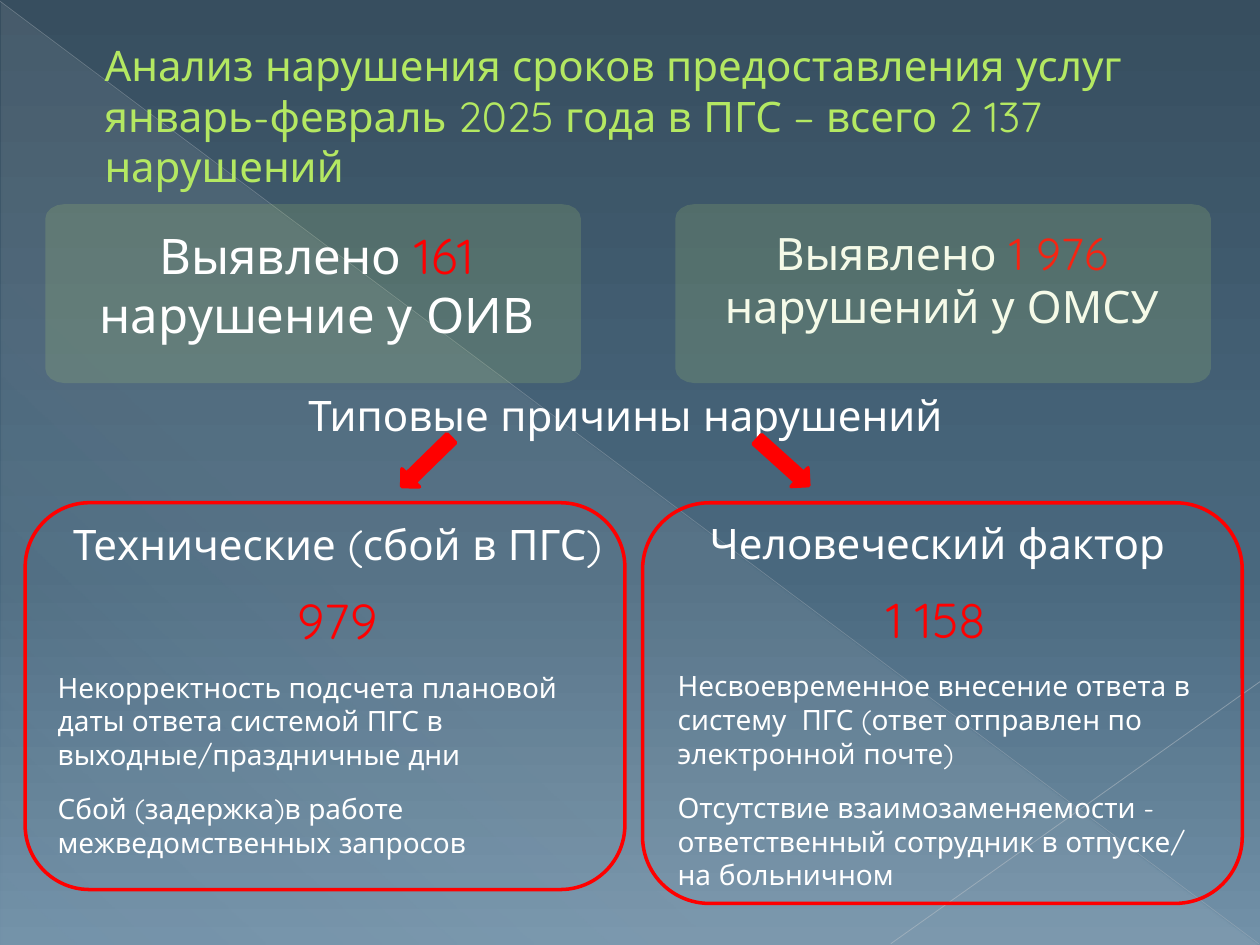
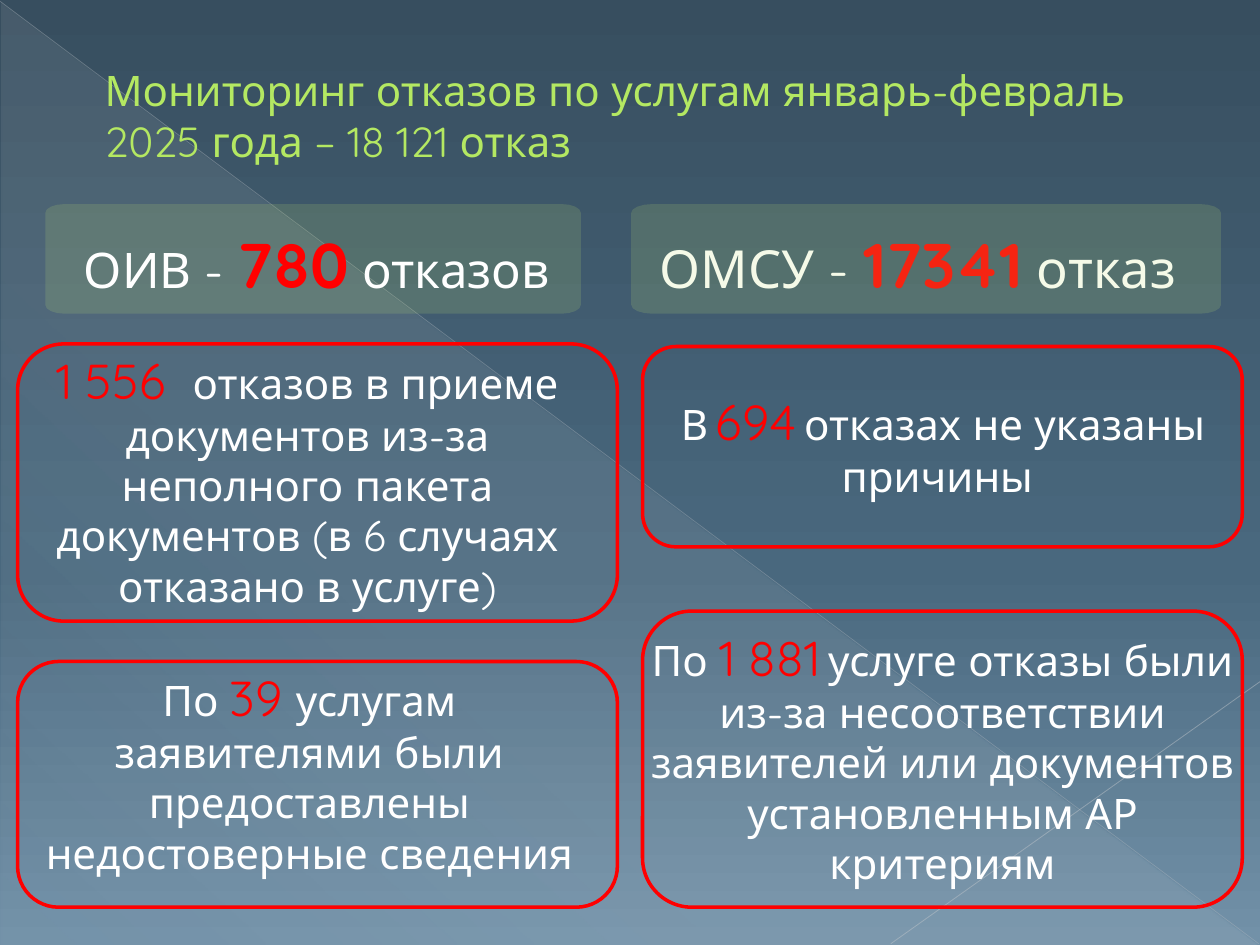
from math import cos, radians, sin

from lxml.etree import SubElement
from pptx import Presentation
from pptx.dml.color import RGBColor
from pptx.enum.shapes import MSO_CONNECTOR, MSO_SHAPE
from pptx.enum.text import MSO_ANCHOR, MSO_AUTO_SIZE, PP_ALIGN
from pptx.oxml import parse_xml
from pptx.oxml.ns import nsdecls, qn
from pptx.util import Inches, Pt

FONT = "Quicksand"
WHITE = RGBColor(0xFF, 0xFF, 0xFF)
RED = RGBColor(0xFF, 0x00, 0x00)
LIME = RGBColor(0xB4, 0xE8, 0x62)
LIME_EDGE = RGBColor(0x69, 0x8A, 0x18)
BAND_GREEN = RGBColor(0xC5, 0xE6, 0x72)
DIAGONAL_GREY = RGBColor(0xBA, 0xC0, 0xC6)
CORNER_GREY = RGBColor(0xC2, 0xC7, 0xCC)
NIGHT = RGBColor(0x37, 0x4E, 0x5F)
STEEL = RGBColor(0x49, 0x68, 0x7E)
MIST = RGBColor(0x72, 0x91, 0xA8)
PALE = RGBColor(0xE7, 0xEC, 0xED)

CENTER, LEFT = PP_ALIGN.CENTER, PP_ALIGN.LEFT
BAND_TOP = 1.62
FRAME_WIDTH = 4.76


def gradient(stops, angle):
    """Return a linear gradient; stops are (position %, colour, opacity %)."""
    marks = "".join(
        f'<a:gs pos="{position * 1000}"><a:srgbClr val="{color}">'
        f'<a:alpha val="{opacity * 1000}"/></a:srgbClr></a:gs>'
        for position, color, opacity in stops
    )
    return parse_xml(
        f'<a:gradFill {nsdecls("a")} rotWithShape="1"><a:gsLst>{marks}</a:gsLst>'
        f'<a:lin ang="{angle * 60000}" scaled="0"/></a:gradFill>'
    )


def add_text(frame, *spans, align=CENTER, before=0, after=0):
    """Add a paragraph; spans are (text, size, colour) with an optional bold flag."""
    para = frame.add_paragraph() if frame.text else frame.paragraphs[0]
    para.alignment = align
    para.space_before, para.space_after = Pt(before), Pt(after)
    for text, size, color, *bold in spans:
        span = para.add_run()
        span.text = text
        span.font.name = FONT
        span.font.size = Pt(size)
        span.font.bold = bool(bold)
        span.font.color.rgb = color
    return para


# Each band: left, width, text box, spans
# Each frame: left, top, height
# Each text: box, paragraphs as (alignment, spans)
PAGES = [
    {
        "title": "Анализ нарушения сроков предоставления услуг январь-февраль "
                 "2025 года в ПГС – всего 2 137 нарушений",
        "band_height": 1.42,
        "bands": [
            (0.36, 4.25, (0.43, 1.74, 4.17, 1.18),
             [("Выявлено ", 28, WHITE), ("161", 28, RED),
              (" нарушение у ОИВ", 28, WHITE)]),
            (5.36, 4.25, (5.39, 1.74, 4.17, 1.18),
             [("Выявлено ", 25.5, WHITE), ("1 976", 25.5, RED),
              (" нарушений у ОМСУ", 25.5, WHITE)]),
        ],
        "frames": [(0.2, 3.99, 3.07), (5.1, 3.99, 3.18)],
        "texts": [
            ((0.12, 3.04, 9.69, 0.5),
             [(CENTER, [("Типовые причины нарушений", 24, WHITE)])]),
            ((0.36, 4.07, 4.64, 2.83),
             [(CENTER, [("Технические (сбой в ПГС)", 24, WHITE)]),
              (CENTER, [("979", 28, RED)]),
              (LEFT, [("Некорректность подсчета плановой даты ответа системой ПГС "
                       "в выходные/праздничные дни", 16, WHITE)]),
              (LEFT, [("Сбой (задержка)в работе межведомственных запросов",
                       16, WHITE)])]),
            ((5.28, 4.06, 4.41, 3.1),
             [(CENTER, [("Человеческий фактор ", 24, WHITE)]),
              (CENTER, [("1 158 ", 28, RED)]),
              (LEFT, [("Несвоевременное внесение ответа в систему  ПГС "
                       "(ответ отправлен по электронной почте)", 16, WHITE)]),
              (LEFT, [("Отсутствие взаимозаменяемости - ответственный сотрудник "
                       "в отпуске/ на больничном", 16, WHITE)])]),
        ],
        "arrows": [(3.11, 135.7), (5.94, 42)],
    },
    {
        "title": "Мониторинг отказов по услугам январь-февраль 2025 года – 18 121 отказ",
        "band_height": 0.87,
        "bands": [
            (0.36, 4.25, (0.43, 1.74, 4.17, 0.75),
             [("ОИВ - ", 28, WHITE), ("780", 36, RED, True),
              (" отказов", 28, WHITE)]),
            (5.01, 4.68, (5, 1.74, 4.57, 1.18),
             [("ОМСУ - ", 30, WHITE), ("17341", 36, RED, True),
              (" отказ", 30, WHITE)]),
        ],
        "frames": [(0.14, 2.73, 2.2), (5.1, 2.75, 1.59),
                   (0.14, 5.25, 1.95), (5.1, 4.85, 2.35)],
        "texts": [
            ((0.12, 2.73, 4.64, 2.19),
             [(CENTER, [("1 556  ", 28, RED),
                        ("отказов в приеме документов из-за неполного пакета документов "
                         "(в 6 случаях отказано в услуге)", 24, WHITE)])]),
            ((5.28, 3.06, 4.41, 0.98),
             [(CENTER, [("В", 24, WHITE), (" ", 16, WHITE), ("694", 28, RED),
                        (" ", 16, WHITE), ("отказах не указаны причины ", 24, WHITE)])]),
            ((5.04, 4.93, 4.88, 2.19),
             [(CENTER, [("По ", 24, WHITE), ("1 881", 28, RED), (" ", 16, WHITE),
                        ("услуге отказы были из-за несоответствии заявителей или "
                         "документов установленным АР критериям", 24, WHITE)])]),
            ((0.15, 5.25, 4.61, 1.78),
             [(CENTER, [("По ", 24, WHITE), ("39 ", 28, RED),
                        ("услугам заявителями были предоставлены недостоверные сведения",
                         24, WHITE)])]),
        ],
        "arrows": [],
    },
]

deck = Presentation()
deck.slide_width, deck.slide_height = Inches(10), Inches(7.5)
layout = deck.slide_layouts[5]
master = deck.slide_master
pages = [deck.slides.add_slide(layout) for _ in PAGES]

# Shared background and decoration, kept on the master
master.background.fill.solid()
background = master._element.find(".//" + qn("p:bgPr"))
background.replace(background[0], gradient(
    [(0, NIGHT, 100), (60, STEEL, 100), (100, MIST, 100)], 90))

triangle = pages[0].shapes.add_shape(
    MSO_SHAPE.RIGHT_TRIANGLE, *map(Inches, (0.01, 0.02, 9.98, 7.48)))
triangle.shadow.inherit = False
triangle.line.fill.background()
triangle.fill.solid()
properties = triangle._element.spPr
properties.replace(properties.find(qn("a:solidFill")), gradient(
    [(0, PALE, 10), (70, PALE, 8), (100, PALE, 1)], 133))
master.shapes._spTree.append(triangle._element)

for ends, color, width, opacity in [
    ((0, 0.01, 9.99, 7.49), DIAGONAL_GREY, 0.39, 35),
    ((10, 5.41, 7.07, 7.49), CORNER_GREY, 0.47, 45),
]:
    line = pages[0].shapes.add_connector(MSO_CONNECTOR.STRAIGHT, *map(Inches, ends))
    line.line.color.rgb = color
    line.line.width = Pt(width)
    properties = line._element.spPr
    SubElement(properties.find(".//" + qn("a:srgbClr")), qn("a:alpha"),
               val=str(opacity * 1000))
    SubElement(properties, qn("a:effectLst"))
    master.shapes._spTree.append(line._element)

# Shared title place
title_place = layout.placeholders[0]
title_place.left, title_place.top = Inches(0.2), Inches(0.29)
title_place.width, title_place.height = Inches(9.3), Inches(1.25)

for page, content in zip(pages, PAGES):
    shapes = page.shapes

    title = shapes.title.text_frame
    title.auto_size = MSO_AUTO_SIZE.NONE
    title.vertical_anchor = MSO_ANCHOR.MIDDLE
    para = add_text(title, (content["title"], 24, LIME), align=LEFT)
    para._p.get_or_add_pPr().set("marL", str(Inches(0.53)))
    para.runs[0]._r.get_or_add_rPr().insert(0, parse_xml(
        f'<a:ln {nsdecls("a")} w="{Pt(0.5)}"><a:solidFill>'
        f'<a:srgbClr val="{LIME_EDGE}"/></a:solidFill></a:ln>'))

    # Bands with elliptical corners; the right one lies over its text
    height = content["band_height"]
    for index, (left, width, box, spans) in enumerate(content["bands"]):
        radius_x, radius_y = 0.036 * width, 0.08 * height
        corners = [(left + width - radius_x, BAND_TOP + height - radius_y),
                   (left + radius_x, BAND_TOP + height - radius_y),
                   (left + radius_x, BAND_TOP + radius_y),
                   (left + width - radius_x, BAND_TOP + radius_y)]
        outline = [
            (Inches(x + radius_x * cos(radians(90 * quarter + step * 22.5))),
             Inches(y + radius_y * sin(radians(90 * quarter + step * 22.5))))
            for quarter, (x, y) in enumerate(corners) for step in range(5)
        ]
        builder = shapes.build_freeform(*outline[0])
        builder.add_line_segments(outline[1:], close=True)
        band = builder.convert_to_shape()
        band.shadow.inherit = False
        band.line.fill.background()
        band.fill.solid()
        band.fill.fore_color.rgb = BAND_GREEN
        SubElement(band._element.spPr.find(".//" + qn("a:srgbClr")), qn("a:alpha"),
                   val="16000")
        label = shapes.add_textbox(*map(Inches, box))
        label.text_frame.word_wrap = True
        add_text(label.text_frame, *spans, before=0.2 * spans[0][1])
        if index == 1:
            label._element.addnext(band._element)

    for box, paragraphs in content["texts"]:
        frame = shapes.add_textbox(*map(Inches, box)).text_frame
        frame.word_wrap = True
        for align, spans in paragraphs:
            add_text(frame, *spans, align=align, after=12)

    for left, top, frame_height in content["frames"]:
        border = shapes.add_shape(MSO_SHAPE.ROUNDED_RECTANGLE, *map(
            Inches, (left, top, FRAME_WIDTH, frame_height)))
        border.shadow.inherit = False
        border.fill.background()
        border.line.color.rgb = RED
        border.line.width = Pt(2)

    for left, angle in content["arrows"]:
        arrow = shapes.add_shape(
            MSO_SHAPE.RIGHT_ARROW, *map(Inches, (left, 3.57, 0.55, 0.2)))
        arrow.rotation = angle
        arrow.shadow.inherit = False
        arrow.fill.solid()
        arrow.fill.fore_color.rgb = RED
        arrow.line.color.rgb = RED
        arrow.line.width = Pt(2)

deck.save("out.pptx")
